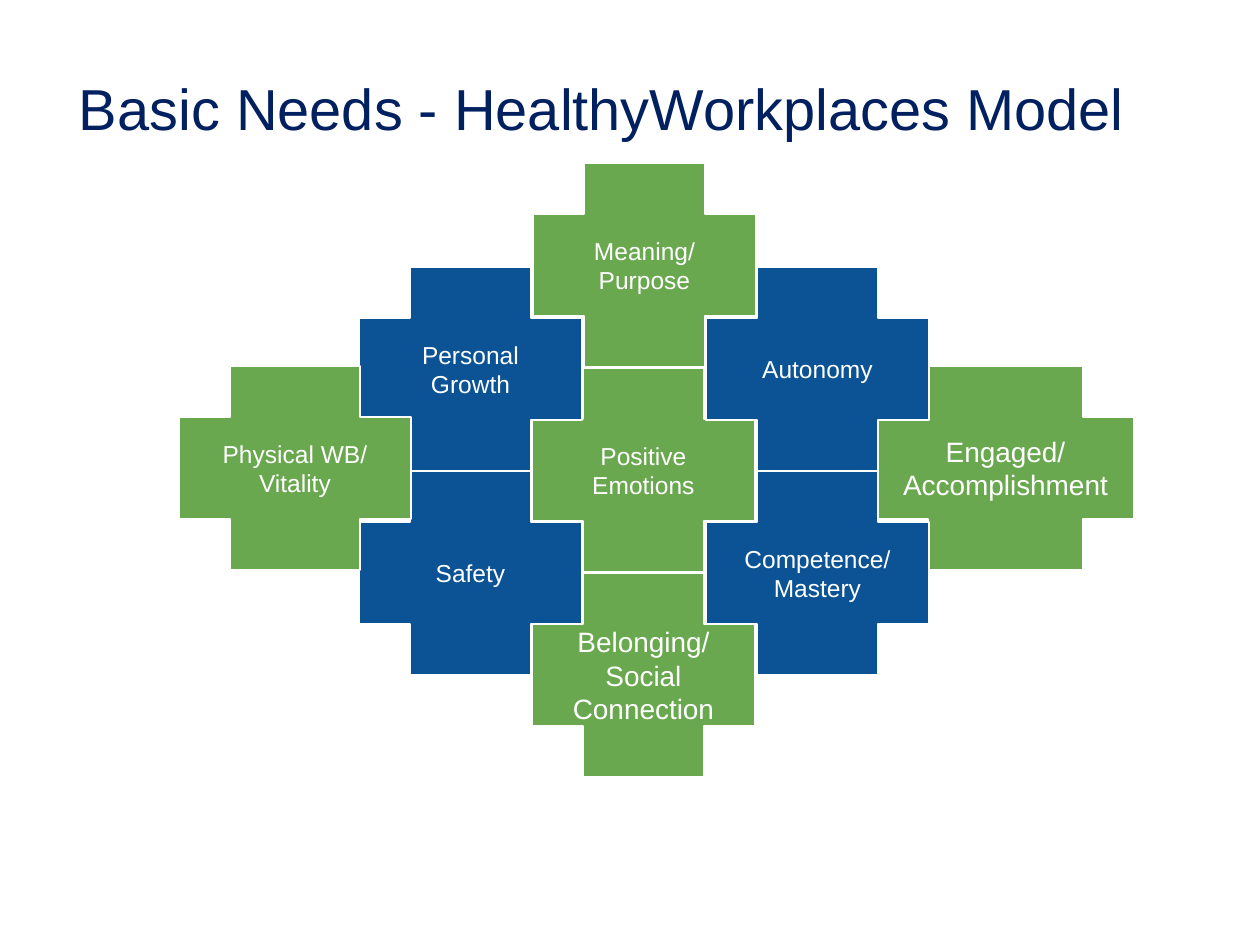
import pptx
import pptx.util
import pptx.dml.color
import pptx.enum.shapes
import pptx.enum.text

SCALE = 914400 / 126
COLORS = {"green": "6AA84F", "blue": "0B5394", "white": "FFFFFF", "navy": "002060"}
ALIGN = pptx.enum.text.PP_ALIGN


def px(length):
    return pptx.util.Emu(round(length * SCALE))


def write_text(shape, text, size, color, paragraph_format):
    frame = shape.text_frame
    frame.text = text
    frame_format = {
        "word_wrap": True,
        "auto_size": pptx.enum.text.MSO_AUTO_SIZE.NONE,
        "vertical_anchor": pptx.enum.text.MSO_ANCHOR.MIDDLE,
        "margin_left": px(13),
        "margin_top": px(13),
        "margin_right": px(13),
        "margin_bottom": px(13),
    }
    for name, value in frame_format.items():
        setattr(frame, name, value)
    for paragraph in frame.paragraphs:
        for name, value in paragraph_format.items():
            setattr(paragraph, name, value)
        paragraph.font.name = "Arial"
        paragraph.font.size = pptx.util.Pt(size)
        paragraph.font.color.rgb = pptx.dml.color.RGBColor.from_string(COLORS[color])


presentation = pptx.Presentation()
presentation.slide_width = px(1260)
presentation.slide_height = px(945)
slide = presentation.slides.add_slide(presentation.slide_layouts[5])

title = slide.shapes.title
title_place = {"left": 66, "top": 20, "width": 1086, "height": 183}
for name, value in title_place.items():
    setattr(title, name, px(value))
write_text(
    title, "Basic Needs - HealthyWorkplaces Model", 33, "navy",
    {"alignment": ALIGN.LEFT, "line_spacing": 0.9},
)

left, center, right = 359, 532, 706
needs = [
    ("Meaning/\nPurpose", center + 1, 163, 223, "green", 14),
    ("Engaged/\nAccomplishment", 877, 366, 257, "green", 16),
    ("Positive\nEmotions", center, 368, 223, "green", 14),
    ("Belonging/\nSocial\nConnection", center, 573, 223, "green", 16),
    ("Autonomy", right, 267, 223, "blue", 14),
    ("Competence/\nMastery", right, 471, 223, "blue", 14),
    ("Personal\nGrowth", left, 267, 223, "blue", 14),
    ("Safety", left, 471, 223, "blue", 14),
    ("Physical WB/\nVitality", 179, 366, 232, "green", 14),
]
for text, x, y, width, color, size in needs:
    cross = slide.shapes.add_shape(
        pptx.enum.shapes.MSO_SHAPE.CROSS, px(x), px(y), px(width), px(204)
    )
    cross.adjustments[0] = 0.25
    cross.shadow.inherit = False
    cross.fill.solid()
    cross.fill.fore_color.rgb = pptx.dml.color.RGBColor.from_string(COLORS[color])
    cross.line.color.rgb = pptx.dml.color.RGBColor.from_string(COLORS["white"])
    cross.line.width = pptx.util.Pt(1.5)
    write_text(cross, text, size, "white", {"alignment": ALIGN.CENTER})

presentation.save("out.pptx")
